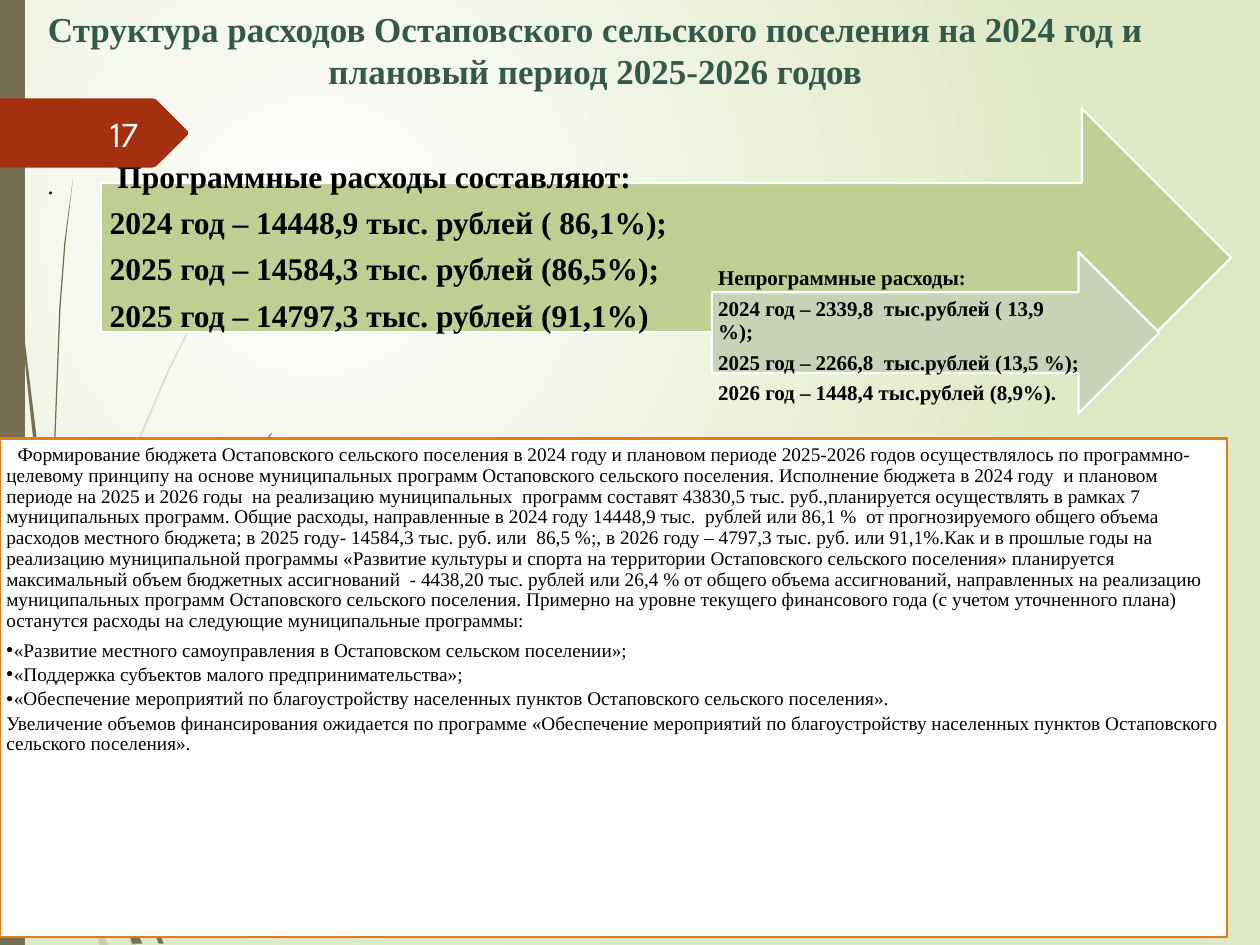
from pptx import Presentation
from pptx.dml.color import RGBColor
from pptx.enum import text as te
from pptx.enum.shapes import MSO_SHAPE
from pptx.oxml import parse_xml
from pptx.oxml.ns import nsdecls, qn
from pptx.util import Inches, Pt
from lxml import etree

BLACK = RGBColor(0, 0, 0)
WHITE = RGBColor(0xFF, 0xFF, 0xFF)
BROWN = RGBColor(0x76, 0x6F, 0x54)
RED = RGBColor(0xA5, 0x30, 0x10)
TEAL = RGBColor(0x32, 0x59, 0x49)
GREEN = RGBColor(0xBF, 0xCE, 0x92)
SAGE = RGBColor(0xC7, 0xD2, 0xB7)
ORANGE = RGBColor(0xDE, 0x7E, 0x18)
SERIF = "Times New Roman"


def outline(points, color):
    pts = [(Inches(x), Inches(y)) for x, y in points]
    pen = shapes.build_freeform(*pts[0])
    pen.add_line_segments(pts[1:], close=True)
    shape = pen.convert_to_shape()
    shape.shadow.inherit = False
    shape.fill.solid()
    shape.fill.fore_color.rgb = color
    shape.line.fill.background()
    return shape


def write(frame, lines, size, color=BLACK, bold=False, font=SERIF, gap=None):
    """Fill a frame with one paragraph per line; gap adds tight block spacing."""
    frame.word_wrap = True
    frame.text = "\n".join(lines)
    for par in frame.paragraphs:
        if gap is not None:
            par.line_spacing = 0.9
            par.space_before = Pt(0)
            par.space_after = Pt(gap)
        for run in par.runs:
            run.font.size = Pt(size)
            run.font.name = font
            run.font.bold = bold
            run.font.color.rgb = color


deck = Presentation()
deck.slide_width, deck.slide_height = Inches(10), Inches(7.5)
slide = deck.slides.add_slide(deck.slide_layouts[1])
shapes = slide.shapes
title, body = slide.placeholders

# Background: white glow fading to pale green
back = slide.background.fill
back.solid()
solid = slide._element.find(".//" + qn("a:solidFill"))
solid.getparent().replace(solid, parse_xml(
    f'<a:gradFill {nsdecls("a")} rotWithShape="1"><a:gsLst>'
    '<a:gs pos="0"><a:srgbClr val="FFFFFF"/></a:gs>'
    '<a:gs pos="100000"><a:srgbClr val="DFE8C4"/></a:gs></a:gsLst>'
    '<a:path path="circle"><a:fillToRect l="50000" t="50000" r="100000" b="100000"/>'
    '</a:path></a:gradFill>'))

# Grass blades along the left edge
faint = [
    [(0.08, 3.5), (0.06, 3.22), (0, 2.82), (0, 2.99), (0.07, 3.44)],
    [(0.4, 5.22), (0.59, 5.99), (0.59, 5.86), (0.43, 5.2), (0.1, 3.45), (0.12, 3.76)],
    [(0.64, 6.07), (0.61, 5.96), (0.61, 6.1), (0.85, 6.94), (1.04, 7.5), (1.08, 7.5),
     (0.88, 6.92)],
    [(0.83, 7.5), (0.86, 7.5), (0.73, 7.11)],
    [(0.61, 5.84), (0.76, 4.62), (1.11, 3.49), (1.34, 2.95), (1.59, 2.45), (1.87, 1.98),
     (2.01, 1.75), (2.17, 1.54), (2.17, 1.53), (2.01, 1.75), (1.86, 1.97), (1.58, 2.44),
     (1.33, 2.94), (1.1, 3.48), (0.75, 4.61), (0.59, 5.84), (0.61, 5.96)],
    [(0.7, 7.14), (0.79, 7.5), (0.82, 7.5)],
    [(0.67, 6.92), (0.65, 6.83), (0.69, 7.07), (0.7, 7.14), (0.82, 7.5), (0.83, 7.5),
     (0.73, 7.11)],
]
strong = [
    [(0.05, 1.1), (0.14, 2.33), (0.27, 3.55), (0.46, 4.77), (0.47, 4.81), (0.45, 4.53),
     (0.3, 3.55), (0.15, 2.32), (0.06, 1.09), (0.04, 0.48), (0.03, 0), (0.02, 0),
     (0.03, 0.48)],
    [(0.94, 6.49), (0.91, 6.41), (0.91, 6.56), (1.09, 7.08), (1.26, 7.49), (1.3, 7.49),
     (1.13, 7.06)],
    [(0.5, 4.72), (0.48, 4.53), (0.44, 3.49), (0.48, 2.45), (0.52, 1.93), (0.58, 1.41),
     (0.51, 1.93), (0.47, 2.45), (0.43, 3.49), (0.45, 4.49), (0.49, 4.72)],
    [(1.1, 7.49), (1.13, 7.49), (1, 7.19)],
    [(0.91, 6.33), (1.03, 5.52), (1.31, 4.76), (1.69, 4.06), (1.91, 3.74), (2.16, 3.44),
     (2.15, 3.44), (1.91, 3.73), (1.68, 4.05), (1.29, 4.74), (1.01, 5.51), (0.88, 6.31),
     (0.91, 6.41)],
    [(0.97, 7.22), (1.05, 7.49), (1.08, 7.49)],
    [(0.96, 7.06), (0.91, 6.91), (0.96, 7.17), (0.97, 7.22), (1.08, 7.49), (1.1, 7.49),
     (1, 7.19)],
]
for blade in faint:
    shape = outline(blade, BROWN)
    tint = shape._element.spPr.find(qn("a:solidFill"))[0]
    etree.SubElement(tint, qn("a:alpha")).set("val", "20000")
for blade in strong:
    outline(blade, BROWN)

# Side bar and number tag
outline([(0, 0), (0.2, 0), (0.2, 7.5), (0, 7.5)], BROWN)
outline([(0, 0.78), (1.21, 0.78), (1.24, 0.79), (1.49, 1.04), (1.49, 1.07),
         (1.24, 1.32), (1.21, 1.33), (0, 1.33)], RED)

# Title
title.left, title.top, title.width, title.height = map(Inches, (0.13, 0.01, 9.19, 0.77))
write(title.text_frame, ["Структура расходов Остаповского сельского поселения на 2024 год "
                         "и плановый период 2025-2026 годов"], 20, TEAL, True)
title.text_frame.auto_size = te.MSO_AUTO_SIZE.NONE
title.text_frame.paragraphs[0].alignment = te.PP_ALIGN.CENTER

# Arrows: arrow box, fill, text box, insets, size, gap, lines
arrows = [
    ((0.8, 0.86, 8.97, 2.37), GREEN, (0.8, 1.45, 8.38, 1.19), (0.07, 0.07, 0.28, 0.23), 18, 7,
     [" Программные расходы составляют:",
      "2024 год – 14448,9 тыс. рублей ( 86,1%);",
      "2025 год – 14584,3 тыс. рублей (86,5%);",
      "2025 год – 14797,3 тыс. рублей (91,1%)"]),
    ((5.65, 2, 3.55, 1.28), SAGE, (5.65, 2.32, 3.23, 0.64), (0.05, 0.29, 0.28, 0.23), 12, 4.7,
     ["Непрограммные расходы:",
      "2024 год – 2339,8  тыс.рублей ( 13,9 %);",
      "2025 год – 2266,8  тыс.рублей (13,5 %);",
      "2026 год – 1448,4 тыс.рублей (8,9%)."]),
]
for place, color, area, inset, size, gap, lines in arrows:
    arrow = shapes.add_shape(MSO_SHAPE.RIGHT_ARROW, *map(Inches, place))
    arrow.shadow.inherit = False
    arrow.fill.solid()
    arrow.fill.fore_color.rgb = color
    arrow.line.color.rgb = WHITE
    arrow.line.width = Pt(1.25)
    frame = shapes.add_textbox(*map(Inches, area)).text_frame
    (frame.margin_left, frame.margin_top,
     frame.margin_right, frame.margin_bottom) = map(Inches, inset)
    frame.vertical_anchor = te.MSO_ANCHOR.MIDDLE
    write(frame, lines, size, bold=True, gap=gap)

# Body, brought in front of the blades
shapes._spTree.append(body._element)
body.left, body.top, body.width, body.height = map(Inches, (0, 3.48, 9.74, 3.96))
body.fill.solid()
body.fill.fore_color.rgb = WHITE
body.line.color.rgb = ORANGE
body.line.width = Pt(1.25)
frame = body.text_frame
frame.margin_left = frame.margin_top = frame.margin_right = frame.margin_bottom = Inches(0.05)
frame.auto_size = te.MSO_AUTO_SIZE.NONE
intro = [
    "Формирование бюджета Остаповского сельского поселения в 2024 году и плановом периоде 2025-2026 годов осуществлялось по программно-целевому принципу на основе муниципальных программ Остаповского сельского поселения.",
    "Исполнение бюджета в 2024 году  и плановом периоде на 2025 и 2026 годы  на реализацию муниципальных  программ составят 43830,5 тыс. руб.,планируется осуществлять в рамках 7 муниципальных программ.",
    "Общие расходы, направленные в 2024 году 14448,9 тыс.  рублей или 86,1 %  от прогнозируемого общего объема расходов местного бюджета; в 2025 году- 14584,3 тыс. руб. или  86,5 %;, в 2026 году – 4797,3 тыс. руб. или 91,1%.Как и в прошлые годы на реализацию муниципальной программы",
    "«Развитие культуры и спорта на территории Остаповского сельского поселения» планируется максимальный объем бюджетных ассигнований  - 4438,20 тыс. рублей или 26,4 % от общего объема ассигнований, направленных на реализацию муниципальных программ Остаповского сельского поселения.",
    "Примерно на уровне текущего финансового года (с учетом уточненного плана) останутся расходы на следующие муниципальные программы:",
]
write(frame, [
    " ".join(intro),
    "«Развитие местного самоуправления в Остаповском сельском поселении»;",
    "«Поддержка субъектов малого предпринимательства»;",
    "«Обеспечение мероприятий по благоустройству населенных пунктов Остаповского сельского поселения».",
    "Увеличение объемов финансирования ожидается по программе «Обеспечение мероприятий по благоустройству населенных пунктов Остаповского сельского поселения».",
], 11, gap=2)
frame.paragraphs[0].space_after = Pt(5)
for i, par in enumerate(frame.paragraphs):
    item = 0 < i < 4
    props = par._p.get_or_add_pPr()
    props.set("marL", str(Inches(0.06 if item else 0)))
    props.set("indent", str(Inches(-0.06 if item else 0 if i else 0.09)))
    if item:
        etree.SubElement(props, qn("a:buChar")).set("char", "•")
    else:
        etree.SubElement(props, qn("a:buNone"))

# Slide number and dot
number = shapes.add_textbox(*map(Inches, (0.56, 0.86, 0.64, 0.4))).text_frame
write(number, ["17"], 20, WHITE, font="League Spartan")
number.vertical_anchor = te.MSO_ANCHOR.MIDDLE
number.paragraphs[0].alignment = te.PP_ALIGN.RIGHT
dot = shapes.add_textbox(*map(Inches, (0.28, 1.3, 4.46, 0.34))).text_frame
write(dot, ["."], 14)

deck.save("out.pptx")
